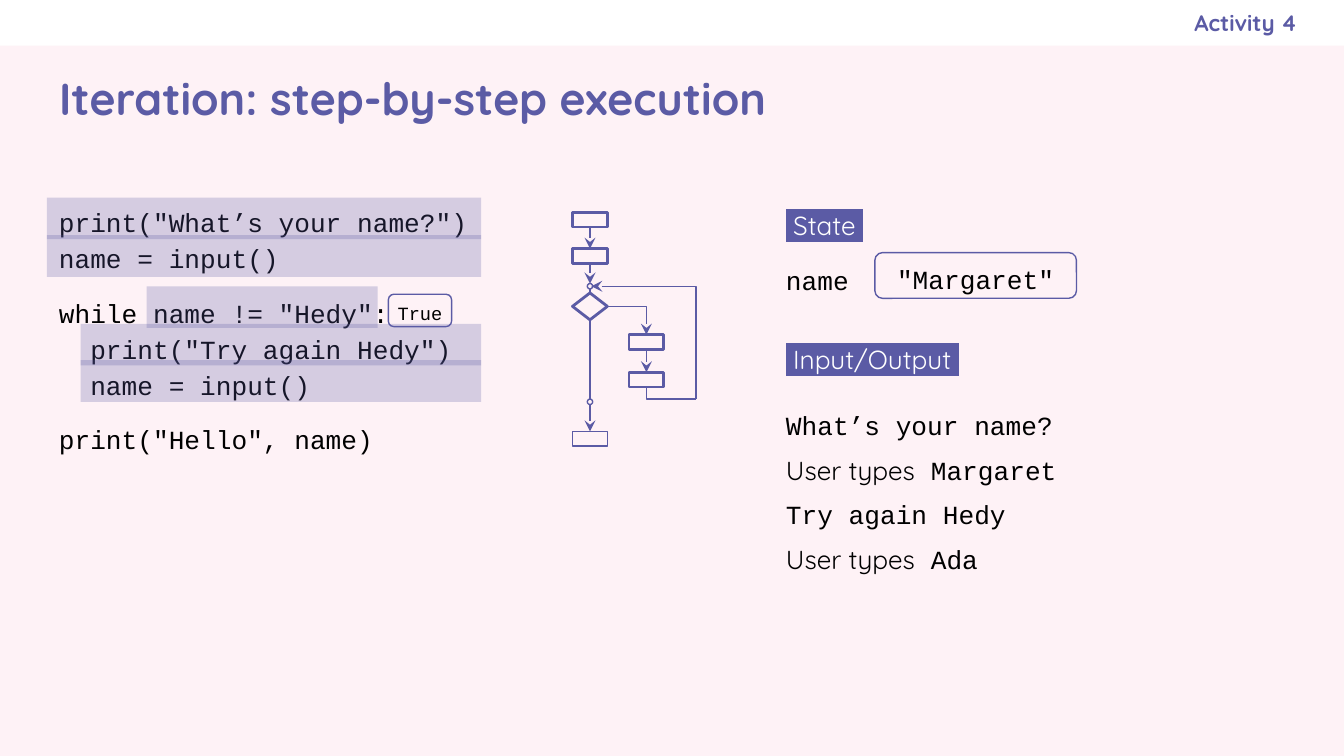
from lxml.etree import SubElement
from pptx import Presentation
from pptx.dml.color import RGBColor
from pptx.enum.shapes import MSO_CONNECTOR, MSO_SHAPE
from pptx.enum.text import MSO_ANCHOR, MSO_AUTO_SIZE, PP_ALIGN
from pptx.oxml.ns import qn
from pptx.util import Inches, Pt

COLORS = {"page": "FEF2F6", "band": "FFFFFF", "accent": "5B5BA5", "text": "000000"}
CODE_FONT, BODY_FONT = "Courier New", "Quicksand"

TITLE = "Iteration: step-by-step execution"
ACTIVITY = "Activity 4"
CODE = [  # line, space before in points
    ('print("What’s your name?")', 0),
    ("name = input()", 0),
    ('while name != "Hedy":', 10),
    ('  print("Try again Hedy")', 0),
    ("  name = input()", 0),
    ('print("Hello", name)', 10),
]
EXECUTED = [  # left, top, right of each highlighted piece of code
    (0.35, 1.47, 3.58), (0.35, 1.75, 3.58),
    (1.09, 2.13, 2.81),
    (0.6, 2.41, 3.58), (0.6, 2.68, 3.58),
]
HEADINGS = [(" State ", 1.42), (" Input/Output ", 2.42)]
DIALOGUE = [
    [("What’s your name?", CODE_FONT)],
    [("User types", BODY_FONT), (" Margaret", CODE_FONT)],
    [("Try again Hedy", CODE_FONT)],
    [("User types", BODY_FONT), (" Ada", CODE_FONT)],
]
VALUES = [  # text, size, left, top, width, height, side inset
    ('"Margaret"', 14, 6.51, 1.88, 1.5, 0.34, 0.1),
    ("True", 10, 2.89, 2.19, 0.47, 0.24, 0),
]

# Flowchart: two columns of centred symbols
MAIN_X, LOOP_X, RETURN_X = 4.39, 4.81, 5.18
BOX, DIAMOND, DOT = (0.26, 0.11), (0.26, 0.2), (0.04, 0.04)
SYMBOLS = [  # shape, centre x, top, size, line width
    (MSO_SHAPE.RECTANGLE, MAIN_X, 1.58, BOX, 1.5),
    (MSO_SHAPE.RECTANGLE, MAIN_X, 1.85, BOX, 1.5),
    (MSO_SHAPE.OVAL, MAIN_X, 2.11, DOT, 0.75),
    (MSO_SHAPE.FLOWCHART_DECISION, MAIN_X, 2.18, DIAMOND, 1.5),
    (MSO_SHAPE.RECTANGLE, LOOP_X, 2.49, BOX, 1.5),
    (MSO_SHAPE.RECTANGLE, LOOP_X, 2.77, BOX, 1.5),
    (MSO_SHAPE.OVAL, MAIN_X, 2.97, DOT, 0.75),
    (MSO_SHAPE.RECTANGLE, MAIN_X, 3.21, BOX, 0.75),
]
STRAIGHT_FLOWS = [  # x, from y, to y, arrow end
    (MAIN_X, 1.69, 1.85, "tailEnd"),
    (MAIN_X, 1.96, 2.11, "tailEnd"),
    (MAIN_X, 2.15, 2.18, None),
    (MAIN_X, 2.38, 2.97, None),
    (MAIN_X, 3.01, 3.21, "tailEnd"),
    (LOOP_X, 2.6, 2.77, "tailEnd"),
]
BENT_FLOWS = [  # start, end, arrow end; each runs sideways first, then up or down
    ((4.51, 2.28), (LOOP_X, 2.49), "tailEnd"),
    ((4.4, 2.13), (RETURN_X, 2.97), "headEnd"),
    ((RETURN_X, 2.97), (LOOP_X, 2.88), None),
]


def color(name):
    return RGBColor.from_string(COLORS[name])


def style(font, size, name, tint="text", bold=False):
    font.size, font.name, font.bold = Pt(size), name, bold
    font.color.rgb = color(tint)


def set_frame(frame, left=0.1, top=0.1, right=0.1, bottom=0.1, anchor=MSO_ANCHOR.TOP):
    frame.word_wrap, frame.auto_size = True, MSO_AUTO_SIZE.NONE
    frame.vertical_anchor = anchor
    frame.margin_left, frame.margin_top = Inches(left), Inches(top)
    frame.margin_right, frame.margin_bottom = Inches(right), Inches(bottom)


def add_text(page, left, top, width, height, spans):
    box = page.shapes.add_textbox(*map(Inches, (left, top, width, height)))
    set_frame(box.text_frame)
    para = box.text_frame.paragraphs[0]
    para.line_spacing = 1.15
    for text, font_name in spans:
        span = para.add_run()
        span.text = text
        style(span.font, 14, font_name)
    return para


def add_block(page, kind, left, top, width, height, fill=None, line_width=None):
    block = page.shapes.add_shape(kind, *map(Inches, (left, top, width, height)))
    block.shadow.inherit = False
    if fill:
        block.fill.solid()
        block.fill.fore_color.rgb = color(fill)
    else:
        block.fill.background()
    if line_width:
        block.line.color.rgb = color("accent")
        block.line.width = Pt(line_width)
    else:
        block.line.fill.background()
    return block


def add_flow(page, start, end, arrow_end, bent=False):
    kind = MSO_CONNECTOR.ELBOW if bent else MSO_CONNECTOR.STRAIGHT
    flow = page.shapes.add_connector(kind, *map(Inches, (*start, *end)))
    flow.line.color.rgb = color("accent")
    flow.line.width = Pt(0.75)
    properties = flow._element.spPr
    if bent:
        properties.find(qn("a:prstGeom")).set("prst", "bentConnector2")
    if arrow_end:
        SubElement(properties.find(qn("a:ln")), qn(f"a:{arrow_end}"), type="stealth")
    SubElement(properties, qn("a:effectLst"))


def fill_placeholder(holder, text, place, size, align, right_inset):
    holder.left, holder.top, holder.width, holder.height = map(Inches, place)
    holder.text_frame.text = text
    set_frame(holder.text_frame, right=right_inset, anchor=MSO_ANCHOR.MIDDLE)
    para = holder.text_frame.paragraphs[0]
    para.alignment, para.space_before = align, Pt(0)
    style(para.font, size, BODY_FONT, "accent", True)


def add_heading(page, text, top):
    span = add_text(page, 5.75, top, 2.33, 0.4, [(text, BODY_FONT)]).runs[0]
    span.font.color.rgb = color("band")
    properties = span.font._element
    highlight = SubElement(properties, qn("a:highlight"))
    SubElement(highlight, qn("a:srgbClr"), val=COLORS["accent"])
    properties.find(qn("a:solidFill")).addnext(highlight)


def main():
    deck = Presentation()
    deck.slide_width = Inches(10)
    deck.slide_height = deck.slide_width * 9 // 16
    page = deck.slides.add_slide(deck.slide_layouts[0])
    page.background.fill.solid()
    page.background.fill.fore_color.rgb = color("page")

    band = add_block(page, MSO_SHAPE.RECTANGLE, 0, 0, 10, 0.34, fill="band")
    page.shapes.title._element.addprevious(band._element)
    fill_placeholder(page.shapes.title, TITLE, (0.34, 0.34, 9.32, 0.77), 24, PP_ALIGN.LEFT, 0.1)
    fill_placeholder(page.placeholders[1], ACTIVITY, (5.75, 0, 3.9, 0.34), 12, PP_ALIGN.RIGHT, 0)

    code = page.shapes.add_textbox(*map(Inches, (0.34, 1.4, 5.41, 2.32))).text_frame
    set_frame(code)
    code.text = "\n".join(line for line, _ in CODE)
    for para, (_, space) in zip(code.paragraphs, CODE):
        para.line_spacing, para.space_before = 1.15, Pt(space)
        style(para.font, 14, CODE_FONT)
    for left, top, right in EXECUTED:
        stripe = add_block(page, MSO_SHAPE.RECTANGLE, left, top, right - left, 0.31, fill="accent")
        tint = stripe._element.spPr.find(qn("a:solidFill"))[0]
        SubElement(tint, qn("a:alpha"), val="25000")

    for x, start, end, arrow_end in STRAIGHT_FLOWS:
        add_flow(page, (x, start), (x, end), arrow_end)
    for start, end, arrow_end in BENT_FLOWS:
        add_flow(page, start, end, arrow_end, bent=True)
    for kind, x, top, (width, height), line_width in SYMBOLS:
        add_block(page, kind, x - width / 2, top, width, height, line_width=line_width)

    for text, top in HEADINGS:
        add_heading(page, text, top)
    add_text(page, 5.75, 1.83, 1.34, 0.4, [("name", CODE_FONT)])
    for row, spans in enumerate(DIALOGUE):
        add_text(page, 5.75, 2.91 + row / 3, 3.9, 0.4, spans)
    for text, size, left, top, width, height, inset in VALUES:
        value = add_block(page, MSO_SHAPE.ROUNDED_RECTANGLE, left, top, width, height, line_width=0.75)
        set_frame(value.text_frame, inset, 0.02, inset, 0, MSO_ANCHOR.MIDDLE)
        value.text_frame.text = text
        para = value.text_frame.paragraphs[0]
        para.alignment, para.line_spacing = PP_ALIGN.CENTER, 1.15
        style(para.font, size, CODE_FONT)

    deck.save("out.pptx")


if __name__ == "__main__":
    main()
